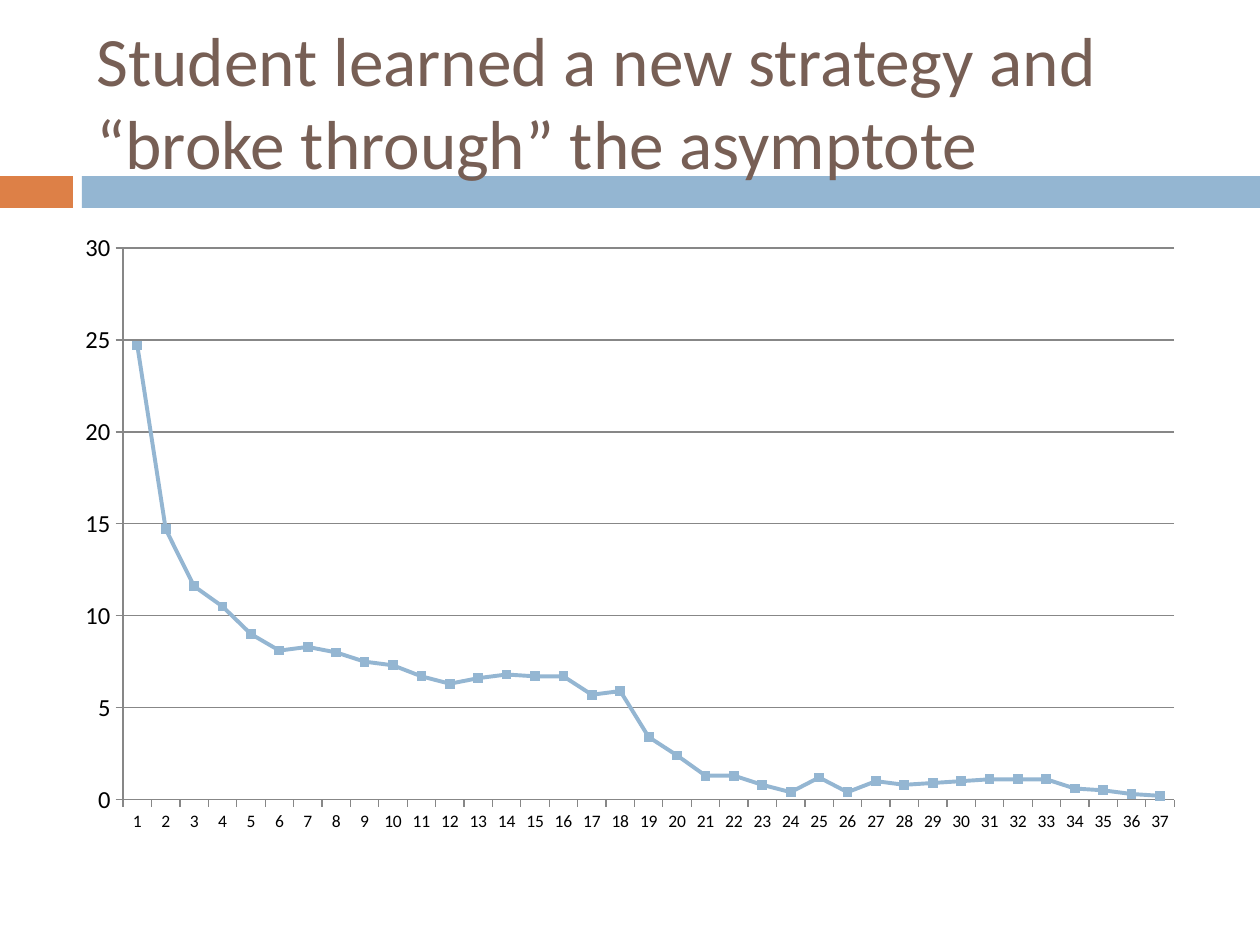
from lxml import etree
from pptx import Presentation
from pptx.chart.data import CategoryChartData
from pptx.dml.color import RGBColor
from pptx.enum.chart import XL_CHART_TYPE as ChartType, XL_MARKER_STYLE as Marker, XL_TICK_MARK as Tick
from pptx.enum.shapes import MSO_SHAPE as Shape
from pptx.enum.text import MSO_ANCHOR as Anchor, MSO_AUTO_SIZE as AutoSize, PP_ALIGN as Align
from pptx.oxml.ns import qn
from pptx.util import Emu, Pt

EMU_PER_PX = 914400 / 126
FONT = "Calibri"
COLORS = {"title": "775F55", "accent": "DD8047", "band": "94B6D2",
          "text": "000000", "axis": "878787"}
TITLE = "Student learned a new strategy and “broke through” the asymptote"
VALUES = [24.7, 14.7, 11.6, 10.5, 9, 8.1, 8.3, 8, 7.5, 7.3, 6.7, 6.3, 6.6,
          6.8, 6.7, 6.7, 5.7, 5.9, 3.4, 2.4, 1.3, 1.3, 0.8, 0.4, 1.2, 0.4,
          1, 0.8, 0.9, 1, 1.1, 1.1, 1.1, 0.6, 0.5, 0.3, 0.2]


def px(length):
    return Emu(round(length * EMU_PER_PX))


def color(name):
    return RGBColor.from_string(COLORS[name])


def set_attributes(target, values):
    for name, value in values.items():
        setattr(target, name, value)


def set_font(font, size, color_name):
    set_attributes(font, {"name": FONT, "size": Pt(size), "bold": False})
    font.color.rgb = color(color_name)


def set_line(line, width, color_name):
    line.width = Pt(width)
    line.color.rgb = color(color_name)


def add_bar(slide, left, width, color_name):
    """Add a bar under the title, behind the title text."""
    bar = slide.shapes.add_shape(Shape.RECTANGLE, px(left), px(176), px(width), px(32))
    bar.shadow.inherit = False
    bar.fill.solid()
    bar.fill.fore_color.rgb = color(color_name)
    bar.line.fill.background()
    slide.shapes.title._element.addprevious(bar._element)


def format_title(title):
    set_attributes(title, {"left": px(84), "top": px(32), "width": px(1124), "height": px(136)})
    frame = title.text_frame
    frame.text = TITLE
    set_attributes(frame, {"word_wrap": True, "auto_size": AutoSize.NONE,
                           "vertical_anchor": Anchor.MIDDLE})
    paragraph = frame.paragraphs[0]
    paragraph.alignment = Align.LEFT
    set_font(paragraph.runs[0].font, 39.6, "title")


def format_axis(axis, size, values):
    set_attributes(axis, {"major_tick_mark": Tick.OUTSIDE, "minor_tick_mark": Tick.NONE, **values})
    set_font(axis.tick_labels.font, size, "text")
    set_line(axis.format.line, 0.75, "axis")


def place_plot(chart, fractions):
    """Fix the inner plot area as fractions of the chart frame."""
    plot_area = chart._chartSpace.chart.plotArea
    for old_layout in plot_area.findall(qn("c:layout")):
        plot_area.remove(old_layout)
    layout = etree.Element(qn("c:layout"))
    manual = etree.SubElement(layout, qn("c:manualLayout"))
    settings = {"layoutTarget": "inner", "xMode": "edge", "yMode": "edge", **fractions}
    for name, value in settings.items():
        etree.SubElement(manual, qn(f"c:{name}")).set("val", str(value))
    plot_area.insert(0, layout)


def add_line_chart(slide):
    data = CategoryChartData()
    data.categories = [str(number) for number in range(1, len(VALUES) + 1)]
    data.add_series("Series 1", VALUES)
    chart = slide.shapes.add_chart(ChartType.LINE_MARKERS, px(63), px(220),
                                   px(1134), px(624), data).chart
    set_attributes(chart, {"has_legend": False, "has_title": False})
    set_font(chart.font, 10, "text")
    chart.plots[0].vary_by_categories = False

    format_axis(chart.category_axis, 10, {"has_major_gridlines": False})
    format_axis(chart.value_axis, 14, {"has_major_gridlines": True, "minimum_scale": 0,
                                       "maximum_scale": 30, "major_unit": 5})
    set_line(chart.value_axis.major_gridlines.format.line, 0.75, "axis")

    series = chart.plots[0].series[0]
    series.smooth = False
    set_line(series.format.line, 2.25, "band")
    set_attributes(series.marker, {"style": Marker.SQUARE, "size": 5})
    series.marker.format.fill.solid()
    series.marker.format.fill.fore_color.rgb = color("band")
    set_line(series.marker.format.line, 0.75, "band")
    place_plot(chart, {"x": 0.053, "y": 0.045, "w": 0.927, "h": 0.884})


def main():
    presentation = Presentation()
    set_attributes(presentation, {"slide_width": px(1260), "slide_height": px(945)})
    slide = presentation.slides.add_slide(presentation.slide_layouts[5])
    format_title(slide.shapes.title)
    add_bar(slide, 0, 73, "accent")
    add_bar(slide, 82, 1178, "band")
    add_line_chart(slide)
    presentation.save("out.pptx")


if __name__ == "__main__":
    main()
